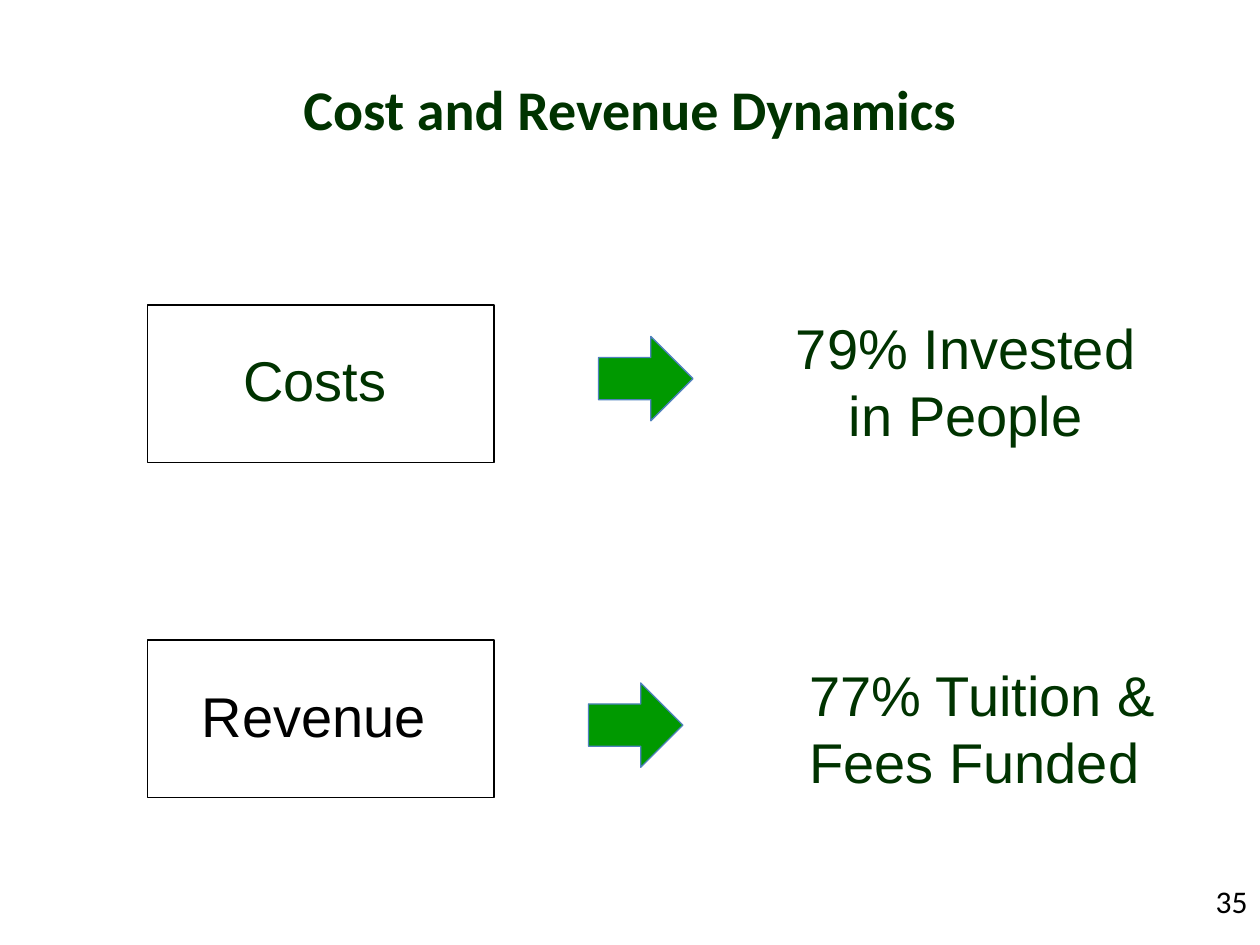
from lxml import etree
from pptx import Presentation
from pptx.dml.color import RGBColor
from pptx.enum.shapes import MSO_SHAPE as SHAPE
from pptx.enum.text import MSO_ANCHOR as ANCHOR, MSO_AUTO_SIZE as AUTO, PP_ALIGN as ALIGN
from pptx.oxml.ns import qn
from pptx.util import Inches, Pt

# Content: boxes are (left, top, width, height) in inches
TITLE = "Cost and Revenue Dynamics"
PAGE = "35"
ROWS = [
    {"label": "Revenue", "color": "black", "label_box": (0.5, 4.92, 3.58, 1.5),
     "result": "77% Tuition & Fees Funded ", "result_box": (5.17, 4.75, 4.25, 1.92),
     "frame_top": 5.08, "arrow_at": (4.67, 5.42)},
    {"label": "Costs", "color": "dark", "label_box": (0.83, 2.25, 3.58, 1.42),
     "result": "79% Invested in People", "result_box": (5.08, 2, 4.17, 1.83),
     "frame_top": 2.42, "arrow_at": (4.75, 2.67)},
]
COLORS = {"black": "000000", "dark": "003300", "arrow": "009900", "edge": "4F81BD"}
INDENT, DROP = 1.1, 0.49  # left and top insets of the row texts


def rgb(name):
    return RGBColor.from_string(COLORS[name])


def place(sp, box):
    sp.left, sp.top, sp.width, sp.height = (Inches(v) for v in box)


def write(sp, text, size, font, color, align, bold=False, anchor=ANCHOR.TOP):
    tf = sp.text_frame
    tf.word_wrap, tf.auto_size, tf.vertical_anchor = True, AUTO.NONE, anchor
    p = tf.paragraphs[0]
    p.alignment, p.space_before = align, Pt(0)
    r = p.add_run()
    r.text = text
    r.font.size, r.font.name, r.font.bold = Pt(size), font, bold
    r.font.color.rgb = rgb(color)
    return tf


def row_text(sp, text, color, align):
    tf = write(sp, text, 32, "Arial", color, align)
    tf.margin_left, tf.margin_top = Inches(INDENT), Inches(DROP)
    # No bullet or hanging indent
    ppr = tf.paragraphs[0]._p.get_or_add_pPr()
    ppr.set("marL", "0")
    ppr.set("indent", "0")
    etree.SubElement(ppr, qn("a:buNone"))


def add_shape(s, kind, box, line, fill=None):
    sp = s.shapes.add_shape(kind, *(Inches(v) for v in box))
    sp.shadow.inherit = False
    if fill:
        sp.fill.solid()
        sp.fill.fore_color.rgb = rgb(fill)
    else:
        sp.fill.background()
    sp.line.color.rgb, sp.line.width = rgb(line), Pt(0.75)


def add_text_box(s, box):
    return s.shapes.add_textbox(*(Inches(v) for v in box))


def main():
    prs = Presentation()
    prs.slide_width, prs.slide_height = Inches(10), Inches(7.5)
    s = prs.slides.add_slide(prs.slide_layouts[1])

    # Title
    place(s.shapes.title, (0, 0.37, 10, 0.97))
    write(s.shapes.title, TITLE, 32, "Calibri", "dark", ALIGN.CENTER, True, ANCHOR.MIDDLE)

    # Row labels and results; the first label is the body placeholder
    body = s.placeholders[1]
    for i, row in enumerate(ROWS):
        label = add_text_box(s, row["label_box"]) if i else body
        place(label, row["label_box"])
        row_text(label, row["label"], row["color"], ALIGN.LEFT)
        row_text(add_text_box(s, row["result_box"]), row["result"], "dark", ALIGN.CENTER)

    # Frames and arrows
    for row in ROWS:
        add_shape(s, SHAPE.RECTANGLE, (1.17, row["frame_top"], 2.75, 1.25), "black")
        add_shape(s, SHAPE.RIGHT_ARROW, (*row["arrow_at"], 0.75, 0.67), "edge", "arrow")

    # Page number
    write(add_text_box(s, (7.67, 6.95, 2.33, 0.4)), PAGE, 18, "Calibri", "black", ALIGN.RIGHT)

    prs.save("out.pptx")


if __name__ == "__main__":
    main()
